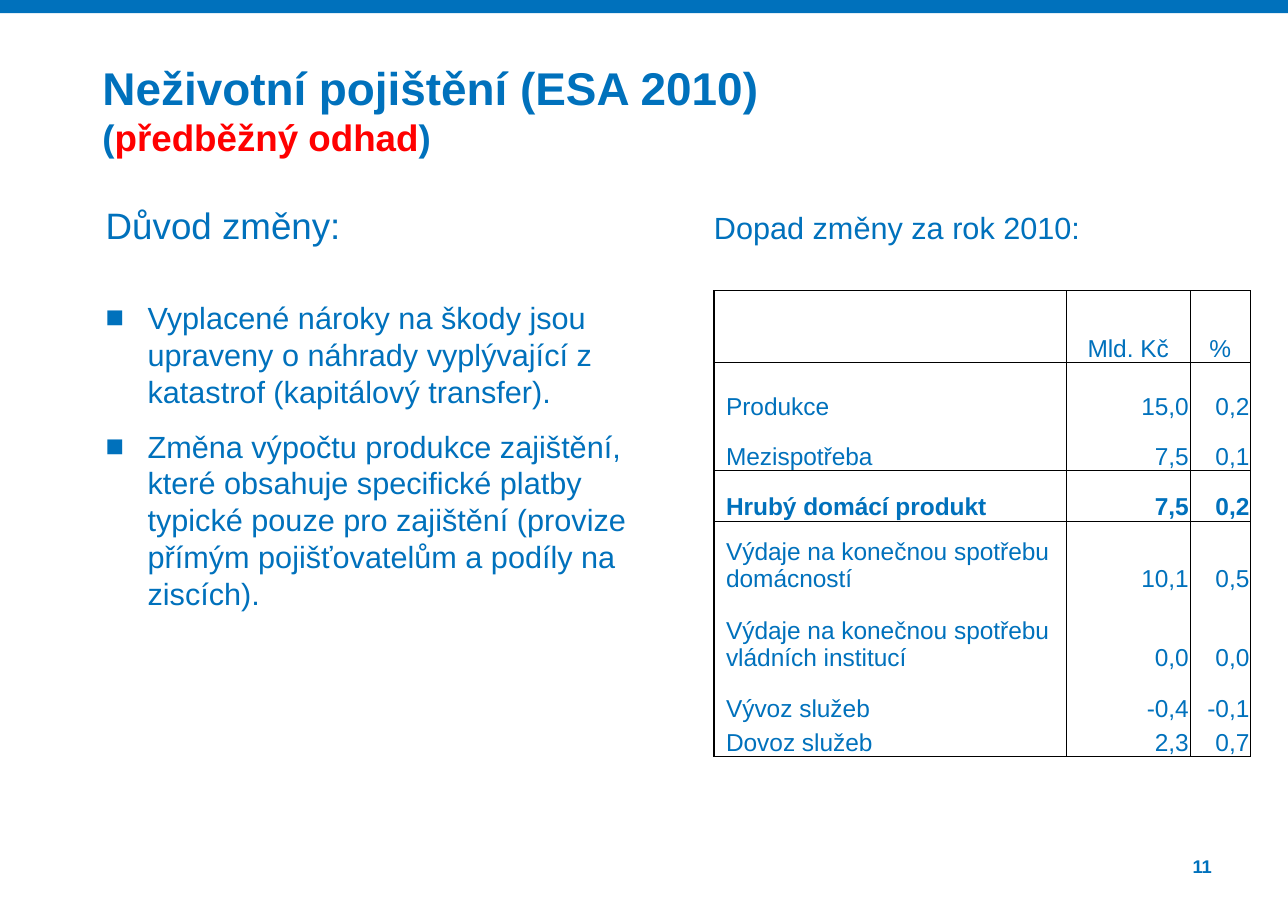
from dataclasses import dataclass

import pptx
import pptx.util
import pptx.dml.color
import pptx.enum.shapes
import pptx.enum.text
import pptx.oxml.ns
from lxml import etree

Inches = pptx.util.Inches
Pt = pptx.util.Pt
ALIGN = pptx.enum.text.PP_ALIGN


@dataclass(frozen=True)
class Theme:
    font: str = "Arial"
    blue: str = "0071BC"
    red: str = "FF0000"
    line: str = "000000"
    title: int = 30
    heading: int = 24
    body: int = 20
    cell: int = 16
    number: int = 12
    outer: float = 1
    inner: float = 0.5


THEME = Theme()

REASONS = [
    "Vyplacené nároky na škody jsou upraveny o náhrady vyplývající z katastrof (kapitálový transfer).",
    "Změna výpočtu produkce zajištění, které obsahuje specifické platby typické pouze pro zajištění "
    "(provize přímým pojišťovatelům a podíly na ziscích).",
]
IMPACT = [
    ("", "Mld. Kč", "%"),
    ("Produkce", "15,0", "0,2"),
    ("Mezispotřeba", "7,5", "0,1"),
    ("Hrubý domácí produkt", "7,5", "0,2"),
    ("Výdaje na konečnou spotřebu domácností", "10,1", "0,5"),
    ("Výdaje na konečnou spotřebu vládních institucí", "0,0", "0,0"),
    ("Vývoz služeb", "-0,4", "-0,1"),
    ("Dovoz služeb", "2,3", "0,7"),
]
COLUMN_WIDTHS = [3.2, 1.12, 0.55]
ROW_HEIGHTS = [0.65, 0.53, 0.45, 0.46, 0.65, 0.72, 0.46, 0.31]
TOTAL_ROW = 3
RULES = {0, 1, 3, 4, 8}  # row boundaries that carry a horizontal line


def rgb(color):
    return pptx.dml.color.RGBColor.from_string(color)


def add_run(p, text, size, color=THEME.blue, bold=False):
    r = p.add_run()
    r.text = text
    r.font.name, r.font.size, r.font.bold = THEME.font, Pt(size), bold
    r.font.color.rgb = rgb(color)


def add_text(s, left, top, width, height, inset=0):
    """Add an empty wrapping text box with the given top and bottom inset."""
    tf = s.shapes.add_textbox(Inches(left), Inches(top), Inches(width), Inches(height)).text_frame
    tf.word_wrap = True
    tf.margin_left = tf.margin_right = 0
    tf.margin_top = tf.margin_bottom = Inches(inset)
    return tf


def indent(p, left, first=0):
    pPr = p._p.get_or_add_pPr()
    pPr.set("marL", str(Inches(left)))
    pPr.set("indent", str(Inches(first)))
    return pPr


def add_bullet(p):
    pPr = indent(p, 0.38, -0.38)
    etree.SubElement(pPr, pptx.oxml.ns.qn("a:buFont"), typeface=THEME.font)
    etree.SubElement(pPr, pptx.oxml.ns.qn("a:buChar"), char="■")


def set_border(cell, side, width):
    """Draw one cell side (L, R, T or B); zero width leaves it open."""
    qn = pptx.oxml.ns.qn
    ln = etree.SubElement(cell._tc.get_or_add_tcPr(), qn("a:ln" + side), w=str(Pt(width)))
    if width:
        fill = etree.SubElement(ln, qn("a:solidFill"))
        etree.SubElement(fill, qn("a:srgbClr"), val=THEME.line)
    else:
        etree.SubElement(ln, qn("a:noFill"))


def border_width(edge, last, drawn=True):
    if edge in (0, last):
        return THEME.outer
    return THEME.inner if drawn else 0


def fill_cell(cell, text, row, col):
    rows, cols = len(ROW_HEIGHTS), len(COLUMN_WIDTHS)
    for side, edge in (("L", col), ("R", col + 1)):
        set_border(cell, side, border_width(edge, cols))
    for side, edge in (("T", row), ("B", row + 1)):
        set_border(cell, side, border_width(edge, rows, edge in RULES))
    cell.fill.background()
    cell.vertical_anchor = pptx.enum.text.MSO_ANCHOR.BOTTOM
    cell.margin_left = cell.margin_right = cell.margin_top = Inches(0.01)
    cell.margin_bottom = 0
    p = cell.text_frame.paragraphs[0]
    if col == 0:
        indent(p, 0.1)
    else:
        p.alignment = ALIGN.CENTER if row == 0 else ALIGN.RIGHT
    if text:
        add_run(p, text, THEME.cell, bold=row == TOTAL_ROW)


def add_impact_table(s):
    table = s.shapes.add_table(
        len(ROW_HEIGHTS), len(COLUMN_WIDTHS), Inches(6.48), Inches(2.64),
        Inches(sum(COLUMN_WIDTHS)), Inches(sum(ROW_HEIGHTS))).table
    table.first_row = table.horz_banding = False
    for column, width in zip(table.columns, COLUMN_WIDTHS):
        column.width = Inches(width)
    for row, height in zip(table.rows, ROW_HEIGHTS):
        row.height = Inches(height)
    for i, values in enumerate(IMPACT):
        for j, text in enumerate(values):
            fill_cell(table.cell(i, j), text, i, j)


def add_top_band(s):
    sp = s.shapes.add_shape(pptx.enum.shapes.MSO_SHAPE.RECTANGLE, 0, 0, Inches(11.69), Inches(0.12))
    sp.shadow.inherit = False
    sp.fill.solid()
    sp.fill.fore_color.rgb = rgb(THEME.blue)
    sp.line.fill.background()


def add_title(s):
    tf = add_text(s, 0.93, 0.49, 10.08, 1.06, inset=0.05)
    add_run(tf.paragraphs[0], "Neživotní pojištění (ESA 2010)", THEME.title, bold=True)
    p = tf.add_paragraph()
    for text, color in (("(", THEME.blue), ("předběžný odhad", THEME.red), (")", THEME.blue)):
        add_run(p, text, THEME.heading, color, bold=True)


def add_reasons(s):
    tf = add_text(s, 0.96, 1.77, 4.8, 3.78)
    p = tf.paragraphs[0]
    p.line_spacing = Pt(34)
    p.space_after = Pt(34)
    add_run(p, "Důvod změny:", THEME.heading)
    for i, text in enumerate(REASONS):
        p = tf.add_paragraph()
        p.line_spacing = Pt(24)
        p.space_before = Pt(12 if i else 0)
        add_bullet(p)
        add_run(p, text, THEME.body)


def main():
    prs = pptx.Presentation()
    prs.slide_width, prs.slide_height = Inches(11.69), Inches(8.27)
    s = prs.slides.add_slide(prs.slide_layouts[6])
    add_top_band(s)
    add_title(s)
    add_reasons(s)
    add_impact_table(s)
    impact_heading = add_text(s, 6.48, 1.85, 4.17, 0.55, inset=0.05)
    add_run(impact_heading.paragraphs[0], "Dopad změny za rok 2010:", THEME.body)
    page_number = add_text(s, 10.22, 7.76, 0.78, 0.21).paragraphs[0]
    page_number.alignment = ALIGN.RIGHT
    add_run(page_number, "11", THEME.number, bold=True)
    prs.save("out.pptx")


if __name__ == "__main__":
    main()
